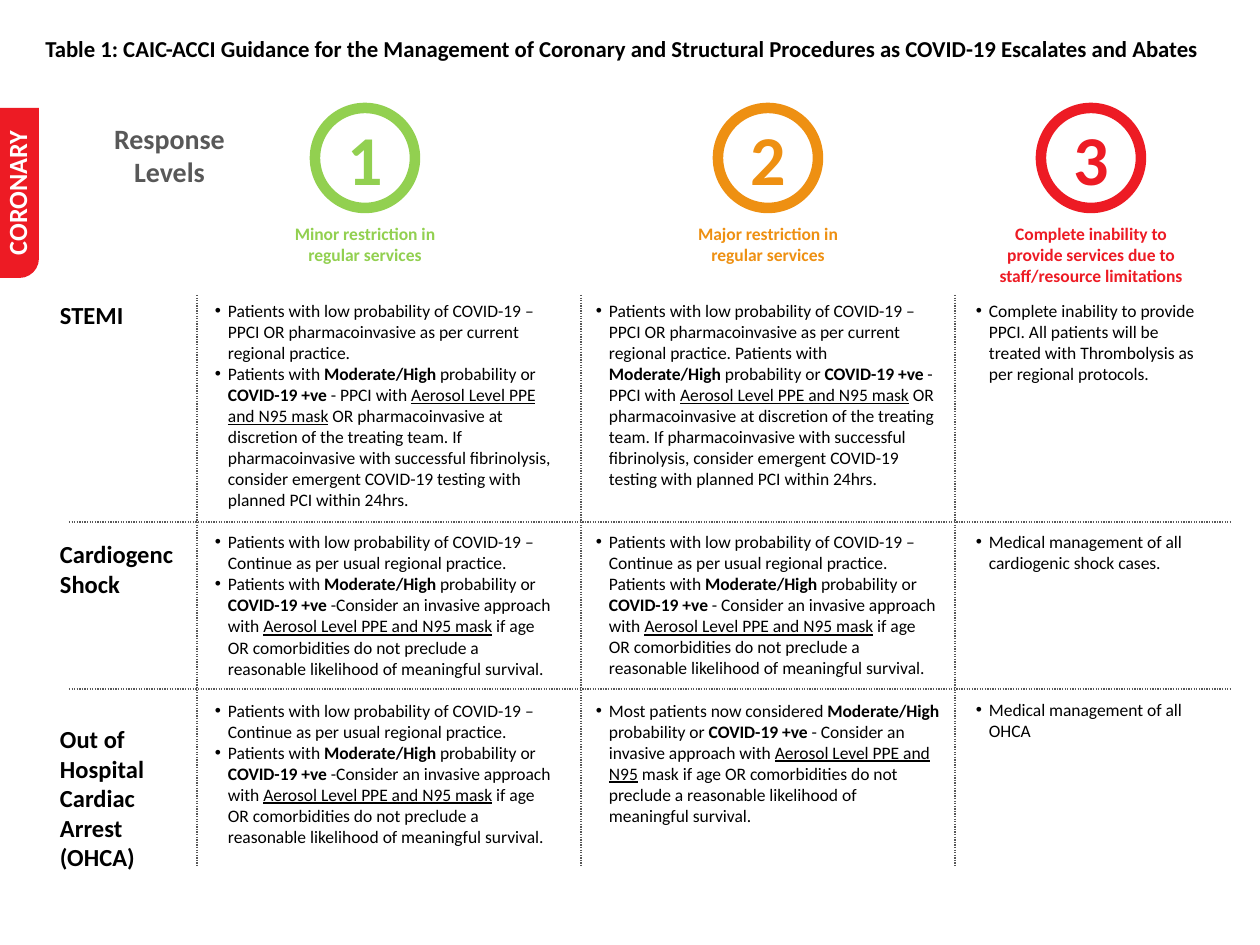
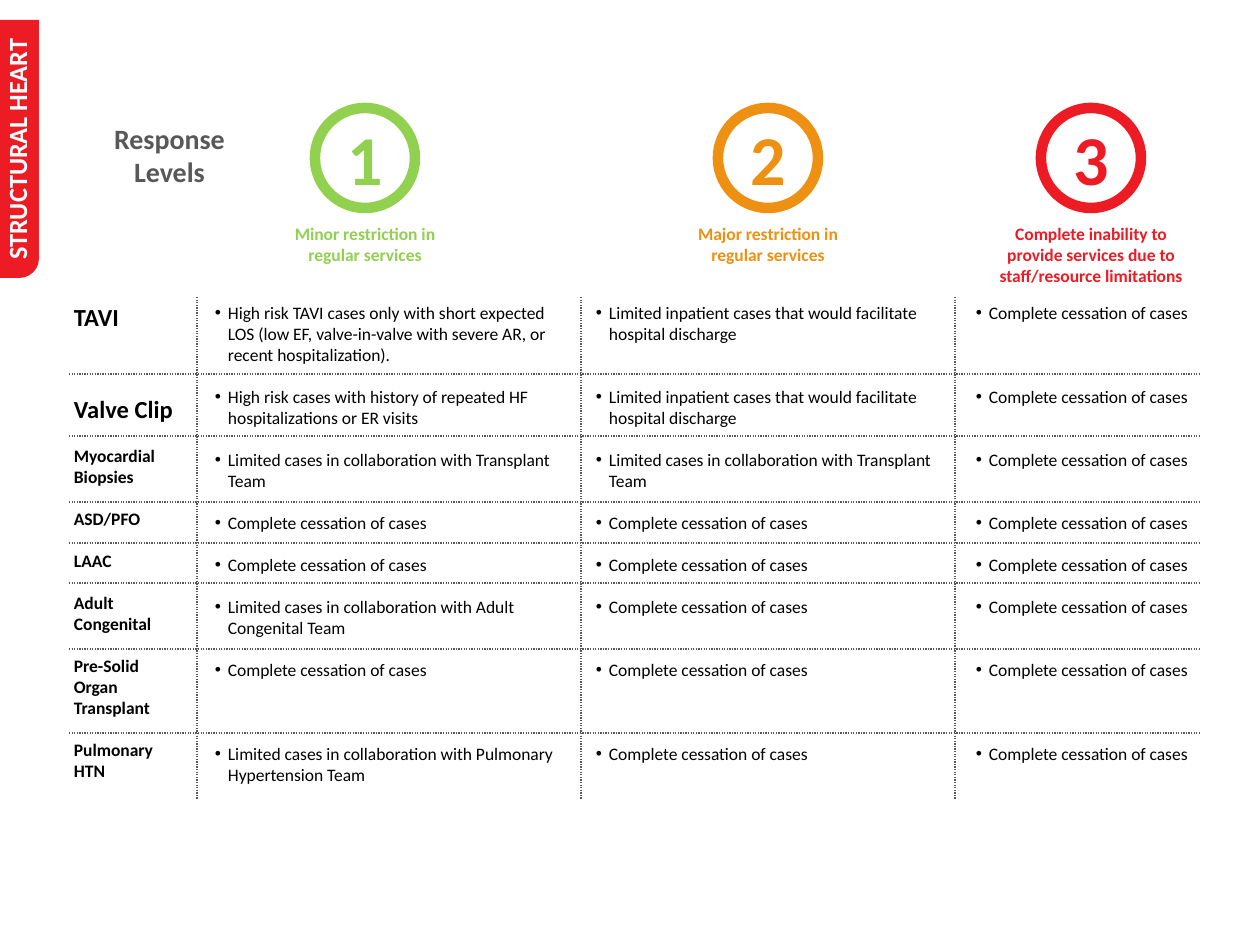
from dataclasses import dataclass
from lxml.etree import SubElement
from pptx import Presentation
from pptx.dml.color import RGBColor
from pptx.enum.dml import MSO_LINE
from pptx.enum.shapes import MSO_CONNECTOR, MSO_SHAPE
from pptx.enum.text import MSO_ANCHOR, MSO_AUTO_SIZE, PP_ALIGN
from pptx.oxml.ns import qn
from pptx.util import Pt


@dataclass(frozen=True)
class Theme:
    font: str = "Calibri"
    black: str = "000000"
    white: str = "FFFFFF"
    grey: str = "585858"
    green: str = "92D050"
    amber: str = "EE9012"
    red: str = "ED1B24"
    body: int = 10
    title: int = 13
    label: int = 14
    tab: int = 15
    head: int = 16
    digit: int = 40
    gap: int = 12  # height of one body line, in points


T = Theme()
SCALE = 914400 / 126
RULES = 197, 581, 955  # x of the column rules
COLS = (210, 354), (591, 354), (971, 237)  # left and width of the columns
LEVELS = (
    (365, 183, 55, T.green, "Minor restriction in\nregular services"),
    (768, 186, 55, T.amber, "Major restriction in\nregular services"),
    (1091, 217, 77, T.red, "Complete inability to\nprovide services due to\n"
     "staff/resource limitations"),
)

# "|" parts the runs; a run that starts with "*" is bold, with "_" underlined
LOW = "Patients with low probability of COVID-19 – "
PPCI = LOW + "PPCI OR pharmacoinvasive as per current regional practice."
USUAL = LOW + "Continue as per usual regional practice."
MASK = "|_Aerosol Level PPE and N95 mask|"
LYSIS = (f"PPCI with {MASK} OR pharmacoinvasive at discretion of the treating "
         "team. If pharmacoinvasive with successful fibrinolysis, consider "
         "emergent COVID-19 testing with planned PCI within 24hrs.")
AGE = (" if age OR comorbidities do not preclude a reasonable likelihood of "
       "meaningful survival.")
RISK = "|*Moderate/High| probability or |*COVID-19 +ve| "
ASK = "Consider an invasive approach with "
SHOCK = f"Patients with {RISK}-{ASK}{MASK}{AGE}"
STOP = "Complete cessation of cases"
TEAM = "Limited cases in collaboration with {} Team"
INPAT = "Limited inpatient cases that would facilitate hospital discharge"

# Each entry: blank lines above it, its text
CORONARY = (
    (585, ((0, PPCI), (0, f"Patients with {RISK}- {LYSIS}"),
           (1, USUAL), (0, SHOCK), (1, USUAL), (0, SHOCK))),
    (541, ((0, f"{PPCI} Patients with {RISK}- {LYSIS}"),
           (2, f"{USUAL} Patients with {RISK}- {ASK}{MASK}{AGE}"),
           (1, f"Most patients now considered {RISK}- {ASK}"
               f"|_Aerosol Level PPE and N95| mask{AGE}"))),
    (473, ((0, "Complete inability to provide PPCI. All patients will be "
               "treated with Thrombolysis as per regional protocols."),
           (7, "Medical management of all cardiogenic shock cases."),
           (6, "Medical management of all OHCA"))),
)
ACUTE = ((0, "STEMI", T.label), (10, "Cardiogenc\nShock", T.label),
         (6, "Out of\nHospital\nCardiac\nArrest\n(OHCA)", T.label))
HEART = (
    (498, ((0, "High risk TAVI cases only with short expected LOS (low EF, "
               "valve-in-valve with severe AR, or recent hospitalization)."),
           (1, "High risk cases with history of repeated HF hospitalizations "
               "or ER visits"),
           (1, TEAM.format("Transplant")), (1, STOP), (1, STOP),
           (1, TEAM.format("Adult Congenital")), (1, STOP),
           (3, TEAM.format("Pulmonary Hypertension")))),
    (476, ((0, INPAT), (2, INPAT), (1, TEAM.format("Transplant")),
           (1, STOP), (1, STOP), (1, STOP), (2, STOP), (3, STOP))),
    (476, tuple((n, STOP) for n in (0, 3, 2, 2, 1, 1, 2, 3))),
)
VALVES = ((0, "TAVI", T.label), (3, "Valve Clip", T.label),
          (1, "Myocardial\nBiopsies", T.body), (1, "ASD/PFO", T.body),
          (1, "LAAC", T.body), (1, "Adult Congenital", T.body),
          (1, "Pre-Solid\nOrgan\nTransplant", T.body),
          (1, "Pulmonary\nHTN", T.body))


def px(n):
    return round(n * SCALE)


def rgb(code):
    return RGBColor.from_string(code)


def style(run, size, color=T.black, bold=False):
    font = run.font
    font.name, font.size, font.bold = T.font, Pt(size), bold
    font.color.rgb = rgb(color)


def write(shape, text, size, color, align=PP_ALIGN.CENTER):
    """Set bold text of one style, one paragraph a line."""
    shape.text_frame.text = text
    for para in shape.text_frame.paragraphs:
        para.alignment = align
        for run in para.runs:
            style(run, size, color, True)


def add_text(slide, x, y, w, h, wrap=True, inset=None):
    box = slide.shapes.add_textbox(px(x), px(y), px(w), px(h))
    frame = box.text_frame
    frame.word_wrap = wrap
    frame.auto_size = MSO_AUTO_SIZE.SHAPE_TO_FIT_TEXT
    if inset is not None:
        frame.margin_left = frame.margin_right = px(inset)
        frame.margin_top = frame.margin_bottom = px(inset)
    return box


def add_form(slide, kind, x, y, w, h):
    form = slide.shapes.add_shape(kind, px(x), px(y), px(w), px(h))
    form.shadow.inherit = False
    form.text_frame.vertical_anchor = MSO_ANCHOR.MIDDLE
    return form


def add_rule(slide, x1, y1, x2, y2):
    rule = slide.shapes.add_connector(
        MSO_CONNECTOR.STRAIGHT, px(x1), px(y1), px(x2), px(y2))
    rule.line.color.rgb = rgb(T.grey)
    rule.line.width = Pt(0.75)
    rule.line.dash_style = MSO_LINE.ROUND_DOT
    SubElement(rule.element.spPr, qn("a:effectLst"))


def add_tab(slide, text, top, bottom=278):
    """Red side tab, rounded at its lower right, read upwards."""
    tab = add_form(slide, MSO_SHAPE.ROUND_1_RECTANGLE, 0, top, 39, bottom - top)
    tab.adjustments[0] = 0.5
    tab.fill.solid()
    tab.fill.fore_color.rgb = rgb(T.red)
    tab.line.fill.background()
    tab.element.spPr.find(qn("a:xfrm")).set("flipV", "1")
    tab.element.txBody.find(qn("a:bodyPr")).set("vert", "vert")
    write(tab, text, T.tab, T.white)


def add_levels(slide, top=108, size=100):
    """Heading, numbered rings and their captions."""
    head = add_text(slide, 101, top + 7, 137, 81, wrap=False)
    write(head, "Response\nLevels", T.head, T.grey)
    for num, (mid, w, h, color, text) in enumerate(LEVELS, 1):
        ring = add_form(slide, MSO_SHAPE.OVAL, mid - size / 2, top, size, size)
        ring.fill.background()
        ring.line.color.rgb = rgb(color)
        ring.line.width = Pt(6)
        write(ring, str(num), T.digit, color)
        note = add_text(slide, mid - w / 2, top + 109, w, h)
        write(note, text, T.body, color)


def add_paras(box, count):
    frame = box.text_frame
    return [frame.paragraphs[0], *(frame.add_paragraph() for _ in range(count - 1))]


def add_bullet(para):
    props = para._p.get_or_add_pPr()
    props.set("marL", str(px(13)))
    props.set("indent", str(px(-13)))
    SubElement(props, qn("a:buFont")).set("typeface", "Arial")
    SubElement(props, qn("a:buChar")).set("char", "•")


def add_column(slide, x, y, w, h, items):
    box = add_text(slide, x, y, w, h, inset=5)
    for para, (skip, text) in zip(add_paras(box, len(items)), items):
        add_bullet(para)
        if skip:
            para.space_before = Pt(skip * T.gap)
        for part in filter(None, text.split("|")):
            run = para.add_run()
            run.text = part.lstrip("*_")
            style(run, T.body, bold=part[0] == "*")
            run.font.underline = part[0] == "_" or None


def add_labels(slide, x, y, w, h, items):
    lines = [(0 if i else skip, line, size) for skip, text, size in items
             for i, line in enumerate(text.split("\n"))]
    box = add_text(slide, x, y, w, h, inset=5)
    for para, (skip, line, size) in zip(add_paras(box, len(lines)), lines):
        para.text = line
        if skip:
            para.space_before = Pt(skip * T.gap)
        style(para.runs[0], size, bold=True)


def add_grid(slide, top, bottom, right, rows):
    for x in RULES:
        add_rule(slide, x, top, x, bottom)
    for y in rows:
        add_rule(slide, 69, y, right, y)


def add_page(deck, tab, tab_top, top, bottom, right, rows, label, names, cols):
    slide = deck.slides.add_slide(deck.slide_layouts[6])
    add_tab(slide, tab, tab_top)
    add_levels(slide)
    add_grid(slide, top, bottom, right, rows)
    add_labels(slide, label[0], top, 129, label[1], names)
    for (x, w), (h, items) in zip(COLS, cols):
        add_column(slide, x, top, w, h, items)
    return slide


def main():
    deck = Presentation()
    deck.slide_width, deck.slide_height = px(1260), px(945)
    first = add_page(deck, "CORONARY", 108, 295, 867, 1231, (522, 689),
                     (55, 587), ACUTE, CORONARY)
    title = add_text(first, 33, 29, 1194, 40, wrap=False)
    write(title, "Table 1: CAIC-ACCI Guidance for the Management of Coronary and "
          "Structural Procedures as COVID-19 Escalates and Abates",
          T.title, T.black, PP_ALIGN.LEFT)
    add_page(deck, "STRUCTURAL HEART", 20, 297, 799, 1201,
             (374, 436, 502, 543, 583, 649, 733), (69, 494), VALVES, HEART)
    deck.save("out.pptx")


if __name__ == "__main__":
    main()
